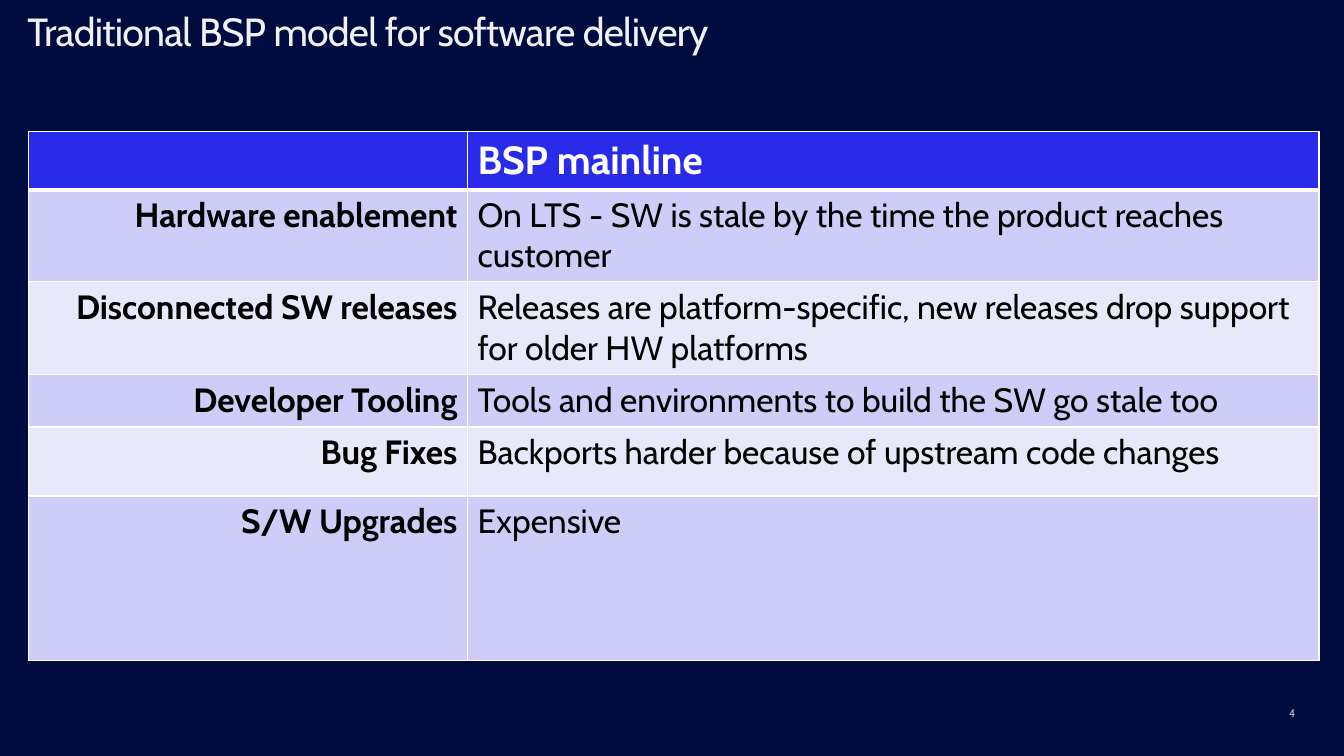
from lxml import etree
from pptx import Presentation
from pptx.dml.color import RGBColor
from pptx.enum.text import MSO_ANCHOR, MSO_AUTO_SIZE, PP_ALIGN
from pptx.oxml.ns import qn
from pptx.util import Cm, Pt

LEFT, RIGHT = PP_ALIGN.LEFT, PP_ALIGN.RIGHT
TOP, BOTTOM = MSO_ANCHOR.TOP, MSO_ANCHOR.BOTTOM
NO_AUTOFIT = MSO_AUTO_SIZE.NONE
FONT = "Cabin"
NAVY, BLUE, WHITE, BLACK = "000C3F", "2A2AEA", "FFFFFF", "000000"
BANDS = ["CDCDF7", "E8E8FB"]
HEADING = "BSP mainline"
TOPICS = [
    ("Hardware enablement", "On LTS - SW is stale by the time the product reaches customer"),
    ("Disconnected SW releases",
     "Releases are platform-specific, new releases drop support for older HW platforms"),
    ("Developer Tooling", "Tools and environments to build the SW go stale too"),
    ("Bug Fixes", "Backports harder because of upstream code changes"),
    ("S/W Upgrades", "Expensive"),
]
COLUMN_WIDTHS = [11.07, 21.46]
ROW_HEIGHTS = [1.46, 2.32, 2.34, 1.32, 1.74, 4.15]


def write(frame, text, size, color, bold=False, align=LEFT, spacing=1.0):
    """Fill a text frame with one formatted paragraph and return its run."""
    para = frame.paragraphs[0]
    para.alignment = align
    para.line_spacing = spacing
    span = para.add_run()
    span.text = text
    span.font.name = FONT
    span.font.size = Pt(size)
    span.font.bold = bold
    span.font.color.rgb = RGBColor.from_string(color)
    return span


def paint(cell, color, bottom_width):
    """Give a table cell white borders and a solid fill."""
    properties = cell._tc.get_or_add_tcPr()
    for side in ("lnL", "lnR", "lnT", "lnB"):
        width = bottom_width if side == "lnB" else 1
        line = etree.SubElement(properties, qn(f"a:{side}"), w=str(Pt(width)))
        solid = etree.SubElement(line, qn("a:solidFill"))
        etree.SubElement(solid, qn("a:srgbClr"), val=WHITE)
    cell.fill.solid()
    cell.fill.fore_color.rgb = RGBColor.from_string(color)


deck = Presentation()
deck.slide_width, deck.slide_height = Cm(33.87), Cm(19.05)
page = deck.slides.add_slide(deck.slide_layouts[5])
page.background.fill.solid()
page.background.fill.fore_color.rgb = RGBColor.from_string(NAVY)

title = page.shapes.title
title.left, title.top, title.width, title.height = Cm(0.69), Cm(0.38), Cm(30.99), Cm(1.8)
number = page.shapes.add_textbox(Cm(32.44), Cm(17.7), Cm(1.04), Cm(0.43))
for box, anchor, inset in ((title, TOP, 0), (number, BOTTOM, 0.05)):
    frame = box.text_frame
    frame.word_wrap = True
    frame.auto_size = NO_AUTOFIT
    frame.vertical_anchor = anchor
    frame.margin_left = frame.margin_right = Cm(inset)
    frame.margin_top = frame.margin_bottom = 0
title_span = write(title.text_frame, "Traditional BSP model for software delivery",
                   28, "EFF1F5", spacing=0.84)
title_span.font._element.set("spc", "-50")
write(number.text_frame, "4", 8, "B8BFD2", spacing=1.25)

table = page.shapes.add_table(
    len(ROW_HEIGHTS), len(COLUMN_WIDTHS), Cm(0.71), Cm(3.32),
    Cm(sum(COLUMN_WIDTHS)), Cm(sum(ROW_HEIGHTS))).table
for column, width in zip(table.columns, COLUMN_WIDTHS):
    column.width = Cm(width)
for row, height in zip(table.rows, ROW_HEIGHTS):
    row.height = Cm(height)

for cell in table.rows[0].cells:
    paint(cell, BLUE, bottom_width=3)
write(table.cell(0, 1).text_frame, HEADING, 28, WHITE, bold=True)
for index, (topic, drawback) in enumerate(TOPICS):
    topic_cell, drawback_cell = table.rows[index + 1].cells
    for cell in (topic_cell, drawback_cell):
        paint(cell, BANDS[index % 2], bottom_width=1)
    write(topic_cell.text_frame, topic, 24, BLACK, bold=True, align=RIGHT)
    write(drawback_cell.text_frame, drawback, 24, BLACK)

deck.save("out.pptx")
